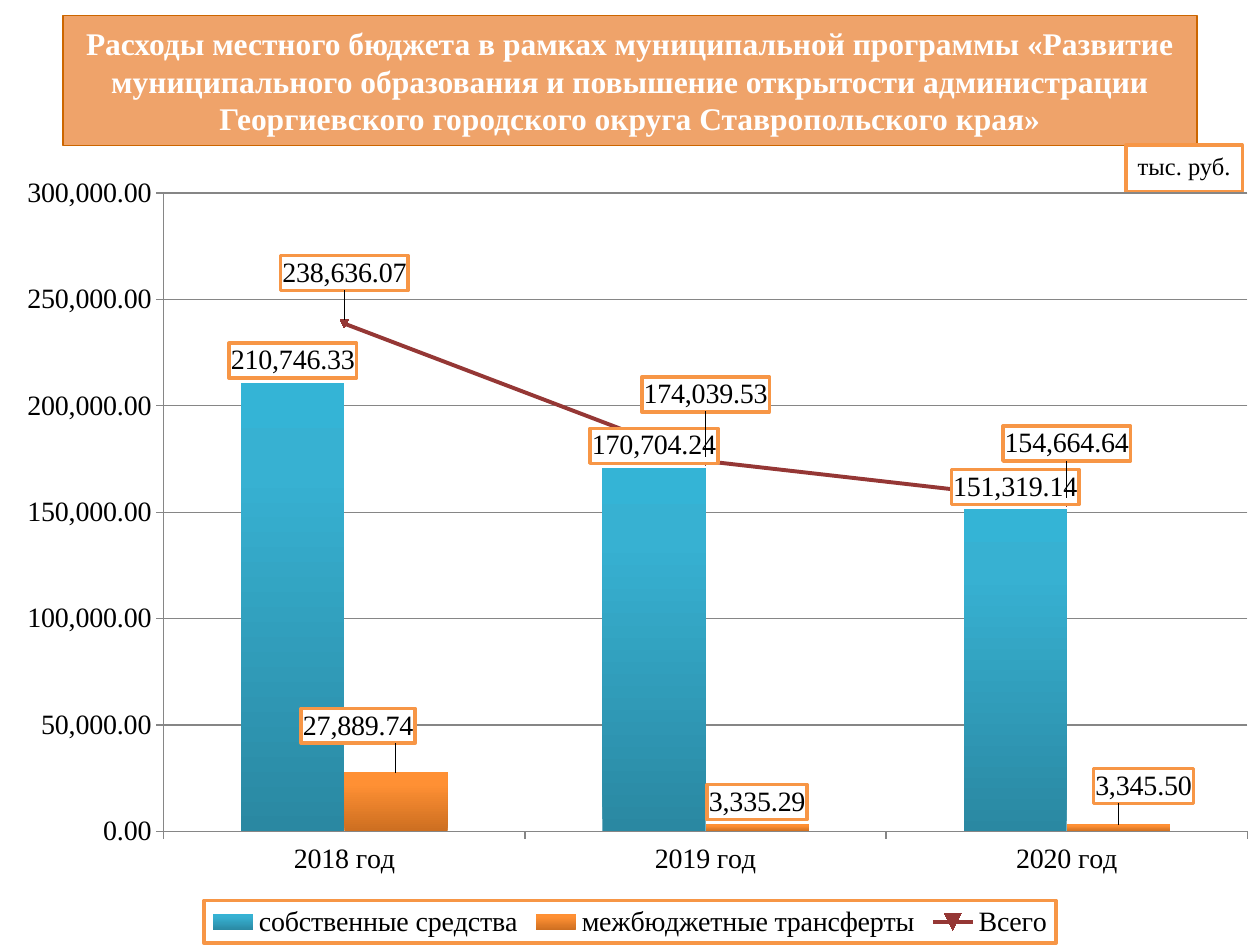
from copy import deepcopy

from pptx import Presentation
from pptx.chart.data import CategoryChartData
from pptx.dml.color import RGBColor
from pptx.enum.chart import XL_CHART_TYPE, XL_LABEL_POSITION, XL_LEGEND_POSITION, XL_TICK_MARK
from pptx.enum.shapes import MSO_SHAPE
from pptx.enum.text import MSO_ANCHOR, PP_ALIGN
from pptx.oxml import parse_xml
from pptx.oxml.ns import nsdecls, qn
from pptx.util import Pt

FONT = "Times New Roman"
NUMBER_FORMAT = "#,##0.00"
WHITE = RGBColor(0xFF, 0xFF, 0xFF)
BLACK = RGBColor(0x00, 0x00, 0x00)
TITLE_FILL = RGBColor(0xE9, 0x7C, 0x2B)
TITLE_BORDER = RGBColor(0xCC, 0x66, 0x00)
ORANGE = RGBColor(0xF7, 0x96, 0x46)
TOTAL = RGBColor(0x95, 0x37, 0x35)
TOTAL_MARKER = RGBColor(0xC0, 0x50, 0x4D)
GRID = RGBColor(0x86, 0x86, 0x86)
OWN_STOPS = [
    (0, RGBColor(0x2A, 0x88, 0xA2)),
    (80, RGBColor(0x37, 0xB1, 0xD2)),
    (100, RGBColor(0x34, 0xB4, 0xD6)),
]
TRANSFER_STOPS = [
    (0, RGBColor(0xCC, 0x6E, 0x20)),
    (80, RGBColor(0xFF, 0x90, 0x34)),
    (100, RGBColor(0xFF, 0x91, 0x36)),
]

TITLE = (
    "Расходы местного бюджета в рамках муниципальной программы «Развитие "
    "муниципального образования и повышение открытости администрации "
    "Георгиевского городского округа Ставропольского края»"
)
YEARS = ["2018 год", "2019 год", "2020 год"]
SPENDING = {
    "собственные средства": [210746.33, 170704.24, 151319.14],
    "межбюджетные трансферты": [27889.74, 3335.29, 3345.5],
    "Всего": [238636.07, 174039.53, 154664.64],
}
TRANSFER_SHIFTS = {0: (-0.03, -0.03), 2: (0.02, -0.02)}
TOTAL_SHIFTS = {0: (0, -0.03), 1: (0, -0.05), 2: (0, -0.04)}


def style_font(font, size, color, bold=False):
    font.name = FONT
    font.size = Pt(size)
    font.bold = bold
    font.color.rgb = color


def add_panel(slide, box, text, size, color, fill, border, width):
    panel = slide.shapes.add_shape(MSO_SHAPE.RECTANGLE, *map(Pt, box))
    panel.shadow.inherit = False
    panel.fill.solid()
    panel.fill.fore_color.rgb = fill
    panel.line.color.rgb = border
    panel.line.width = Pt(width)
    frame = panel.text_frame
    frame.text = text
    frame.paragraphs[0].alignment = PP_ALIGN.CENTER
    style_font(frame.paragraphs[0].runs[0].font, size, color)
    return panel


def add_title(slide, box):
    title = add_panel(slide, box, TITLE, 18, WHITE, TITLE_FILL, TITLE_BORDER, 0.75)
    title.text_frame.word_wrap = True
    title.text_frame.vertical_anchor = MSO_ANCHOR.MIDDLE
    title.text_frame.paragraphs[0].runs[0].font.bold = True
    color = title._element.spPr.find(qn("a:solidFill"))[0]
    color.append(parse_xml(f'<a:alpha {nsdecls("a")} val="70000"/>'))


def add_unit(slide, box):
    unit = add_panel(slide, box, "тыс. руб.", 14, BLACK, WHITE, ORANGE, 2)
    unit.text_frame.word_wrap = False
    unit.text_frame.vertical_anchor = MSO_ANCHOR.TOP


def manual_layout(parts):
    inner = "".join(f'<c:{tag} val="{value}"/>' for tag, value in parts)
    return parse_xml(
        f'<c:layout {nsdecls("c")}><c:manualLayout>{inner}</c:manualLayout></c:layout>'
    )


def frame_in_orange(element):
    element.find(qn("c:txPr")).addprevious(parse_xml(
        f'<c:spPr {nsdecls("c", "a")}><a:solidFill><a:srgbClr val="{WHITE}"/></a:solidFill>'
        f'<a:ln w="{int(Pt(2))}"><a:solidFill><a:srgbClr val="{ORANGE}"/></a:solidFill></a:ln></c:spPr>'
    ))


def fill_gradient(series, stops):
    series.format.fill.solid()
    solid = series._element.find(qn("c:spPr")).find(qn("a:solidFill"))
    marks = "".join(
        f'<a:gs pos="{position * 1000}"><a:srgbClr val="{color}"/></a:gs>'
        for position, color in stops
    )
    solid.getparent().replace(solid, parse_xml(
        f'<a:gradFill {nsdecls("a")} rotWithShape="1"><a:gsLst>{marks}</a:gsLst>'
        '<a:lin ang="16200000" scaled="0"/></a:gradFill>'
    ))


def label_series(series, position, shifts):
    labels = series.data_labels
    labels.show_value = True
    labels.number_format = NUMBER_FORMAT
    labels.number_format_is_linked = False
    labels.position = position
    style_font(labels.font, 16, BLACK)
    shared = series._element.find(qn("c:dLbls"))
    frame_in_orange(shared)
    parts = [part for part in shared if part.tag != qn("c:showLeaderLines")]
    for place, (index, (x, y)) in enumerate(shifts.items()):
        label = parse_xml(f'<c:dLbl {nsdecls("c")}><c:idx val="{index}"/></c:dLbl>')
        label.append(manual_layout([("x", x), ("y", y)]))
        label.extend([deepcopy(part) for part in parts])
        shared.insert(place, label)


def move_total_to_line(chart):
    bars = chart.plots[0]._element
    total = bars.findall(qn("c:ser"))[-1]
    line = parse_xml(
        f'<c:lineChart {nsdecls("c")}><c:grouping val="standard"/>'
        '<c:varyColors val="0"/><c:marker val="1"/></c:lineChart>'
    )
    for bar_only in total.findall(qn("c:invertIfNegative")):
        total.remove(bar_only)
    line.insert(2, total)
    line.extend([deepcopy(axis) for axis in bars.findall(qn("c:axId"))])
    bars.addnext(line)


def style_axes(chart):
    values = chart.value_axis
    values.minimum_scale = 0
    values.maximum_scale = 300000
    values.major_unit = 50000
    values.tick_labels.number_format = NUMBER_FORMAT
    values.tick_labels.number_format_is_linked = False
    values.has_major_gridlines = True
    values.major_gridlines.format.line.color.rgb = GRID
    for axis in (values, chart.category_axis):
        axis.major_tick_mark = XL_TICK_MARK.OUTSIDE
        axis.format.line.color.rgb = GRID
        style_font(axis.tick_labels.font, 16, BLACK)


def add_spending_chart(slide, box):
    data = CategoryChartData(number_format=NUMBER_FORMAT)
    data.categories = YEARS
    for name, amounts in SPENDING.items():
        data.add_series(name, amounts)
    chart = slide.shapes.add_chart(
        XL_CHART_TYPE.COLUMN_CLUSTERED, *map(Pt, box), data
    ).chart
    chart.has_title = False
    style_font(chart.font, 16, BLACK)
    style_axes(chart)
    move_total_to_line(chart)

    bars, line = chart.plots
    bars.gap_width = 150
    bars.overlap = 0
    bars.vary_by_categories = False
    own, transfers = bars.series
    fill_gradient(own, OWN_STOPS)
    fill_gradient(transfers, TRANSFER_STOPS)
    label_series(own, XL_LABEL_POSITION.OUTSIDE_END, {})
    label_series(transfers, XL_LABEL_POSITION.OUTSIDE_END, TRANSFER_SHIFTS)

    total = line.series[0]
    total.smooth = False
    total.format.line.color.rgb = TOTAL
    total.format.line.width = Pt(2.25)
    total.marker.size = 5
    total.marker.format.fill.solid()
    total.marker.format.fill.fore_color.rgb = TOTAL_MARKER
    total.marker.format.line.color.rgb = TOTAL
    label_series(total, XL_LABEL_POSITION.ABOVE, TOTAL_SHIFTS)

    chart.has_legend = True
    chart.legend.position = XL_LEGEND_POSITION.BOTTOM
    chart.legend.include_in_layout = False
    style_font(chart.legend.font, 16, BLACK)
    frame_in_orange(chart.legend._element)

    plot_area = bars._element.getparent()
    for layout in plot_area.findall(qn("c:layout")):
        plot_area.remove(layout)
    plot_area.insert(0, manual_layout([
        ("layoutTarget", "inner"), ("xMode", "edge"), ("yMode", "edge"),
        ("x", 0.13), ("y", 0.06), ("w", 0.86), ("h", 0.8),
    ]))


def main():
    presentation = Presentation()
    presentation.slide_width = Pt(720)
    presentation.slide_height = Pt(540)
    slide = presentation.slides.add_slide(presentation.slide_layouts[6])
    add_title(slide, (36, 9, 648, 74))
    add_unit(slide, (643.5, 83, 66.5, 26.5))
    add_spending_chart(slide, (0, 83, 720, 457))
    presentation.save("out.pptx")


if __name__ == "__main__":
    main()
